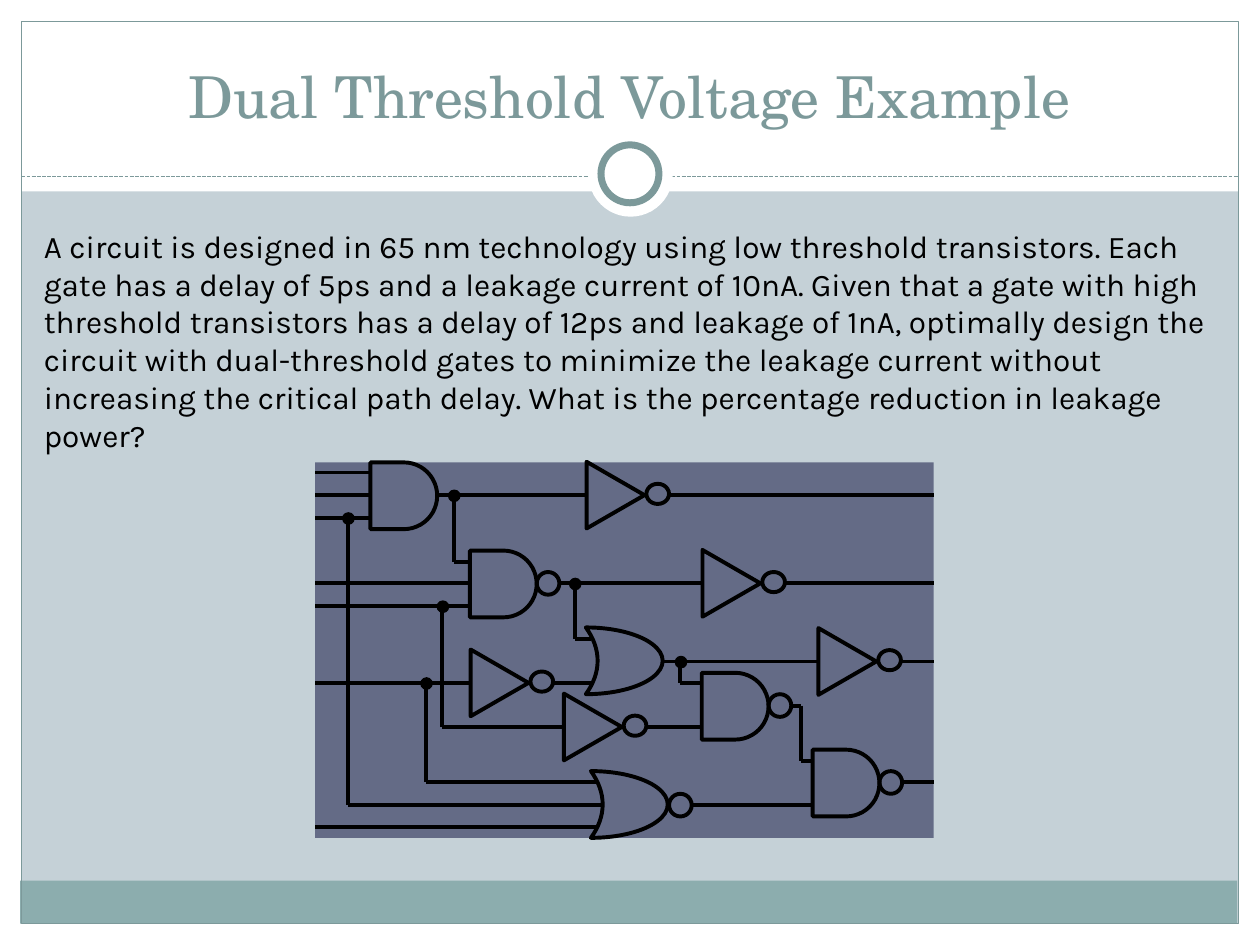
"""Build the dual threshold voltage slide with its logic circuit."""
from lxml import etree
from pptx import Presentation, util as u
from pptx.dml.color import RGBColor
from pptx.enum import dml, shapes, text

PX = 9144
HUE = {"back": "C5D1D7", "white": "FFFFFF", "band": "8CADAE",
       "teal": "7C999A", "slate": "646B86", "black": "000000"}
KIND = shapes.MSO_SHAPE
TITLE = "Dual Threshold Voltage Example"
BODY = (
    "A circuit is designed in 65 nm technology using low threshold transistors. "
    "Each gate has a delay of 5ps and a leakage current of 10nA. Given that a gate "
    "with high threshold transistors has a delay of 12ps and leakage of 1nA, "
    "optimally design the circuit with dual-threshold gates to minimize the leakage "
    "current without increasing the critical path delay. What is the percentage "
    "reduction in leakage power?")

BANDS = [
    ((0, 733, 1000, 17), "white"), ((0, 0, 1000, 152), "white"),
    ((0, 0, 17, 750), "white"), ((983, 0, 17, 750), "white"),
    ((16, 699, 966, 34), "band")]

GATES = {
    "and": dict(kind=KIND.FLOWCHART_DELAY, size=(53, 53), rise=26, out=53, dot=(18, 18)),
    "or": dict(kind=KIND.MOON, size=(61, 53), rise=27, out=62, dot=(18, 18)),
    "not": dict(kind=KIND.ISOSCELES_TRIANGLE, size=(53, 46), rise=23, out=51, dot=(18, 16))}

PARTS = [
    ("and", 294, 393, False), ("and", 373, 463, True),
    ("and", 557, 560, True), ("and", 645, 621, True),
    ("or", 465, 525, False), ("or", 469, 639, True),
    ("not", 462, 393, True), ("not", 554, 463, True), ("not", 646, 525, True),
    ("not", 370, 542, True), ("not", 444, 577, True)]

ROWS = [
    (375, 250, 294), (393, 250, 294), (411, 250, 294), (393, 347, 465),
    (393, 531, 741), (463, 250, 373), (481, 250, 373), (446, 360, 373),
    (463, 443, 557), (463, 623, 741), (507, 456, 469), (525, 526, 649),
    (525, 715, 741), (542, 250, 373), (542, 439, 469), (542, 540, 557),
    (560, 627, 636), (577, 351, 447), (577, 513, 557), (604, 636, 645),
    (621, 338, 474), (621, 715, 741), (639, 276, 478), (639, 548, 645),
    (656, 250, 474)]
DROPS = [
    (456, 463, 507), (360, 393, 446), (540, 525, 542), (636, 560, 604),
    (351, 481, 577), (338, 542, 621), (276, 411, 639)]
NODES = [(540, 525), (351, 481), (338, 542), (276, 411), (456, 463), (360, 393)]


def rgb(name):
    return RGBColor.from_string(HUE[name])


def draw(home, kind, box, fill=None, line=None, width=2.25):
    item = home.add_shape(kind, *(n * PX for n in box))
    item.shadow.inherit = False
    if fill:
        item.fill.solid()
        item.fill.fore_color.rgb = rgb(fill)
    else:
        item.fill.background()
    if line:
        item.line.color.rgb = rgb(line)
        item.line.width = u.Pt(width)
    else:
        item.line.fill.background()
    return item


def wire(home, ends, hue="black", width=2.25):
    item = home.add_connector(shapes.MSO_CONNECTOR.STRAIGHT, *(n * PX for n in ends))
    item.line.color.rgb = rgb(hue)
    item.line.width = u.Pt(width)
    main = "http://schemas.openxmlformats.org/drawingml/2006/main"
    etree.SubElement(item._element.spPr, f"{{{main}}}effectLst")
    return item


def gate(home, name, left, mid, ring):
    form = GATES[name]
    item = draw(home, form["kind"], (left, mid - form["rise"], *form["size"]), line="black")
    if name == "not":
        item.rotation = 90
    elif name == "or":
        item.adjustments[0] = 0.847
        item._element.spPr.xfrm.set("flipH", "1")
    if ring:
        draw(home, KIND.OVAL, (left + form["out"], mid - 9, *form["dot"]), line="black")


def write(item, box, words, font, size, hue):
    item.left, item.top, item.width, item.height = (n * PX for n in box)
    frame = item.text_frame
    frame.word_wrap = True
    frame.text = words
    para = frame.paragraphs[0]
    para.font.name = font
    para.font.size = u.Pt(size)
    para.font.color.rgb = rgb(hue)
    return frame, para


def frame_page(home):
    for box, hue in BANDS:
        draw(home, KIND.RECTANGLE, box, hue)
    draw(home, KIND.RECTANGLE, (17, 17, 966, 716), line="teal", width=0.75)
    rule = wire(home, (17, 140, 983, 140), "teal", 0.75)
    rule.line.dash_style = dml.MSO_LINE.SQUARE_DOT
    draw(home, KIND.OVAL, (467, 105, 67, 67), "white")
    draw(home, KIND.OVAL, (477, 115, 46, 46), "white", "teal", 4)


def circuit(home):
    draw(home, KIND.RECTANGLE, (250, 367, 491, 298), "slate")
    for part in PARTS:
        gate(home, *part)
    for y, x1, x2 in ROWS:
        wire(home, (x1, y, x2, y))
    for x, y1, y2 in DROPS:
        wire(home, (x, y1, x, y2))
    for x, y in NODES:
        draw(home, KIND.OVAL, (x - 4, y - 4, 9, 9), "black", "black", 0.75)


def main():
    deck = Presentation()
    deck.slide_width, deck.slide_height = 1000 * PX, 750 * PX
    page = deck.slides.add_slide(deck.slide_layouts[5])
    page.background.fill.solid()
    page.background.fill.fore_color.rgb = rgb("back")
    frame_page(page.shapes)

    title = page.shapes.title
    frame, para = write(title, (33, 25, 933, 83), TITLE, "TeX Gyre Schola", 33, "teal")
    frame.vertical_anchor = text.MSO_ANCHOR.BOTTOM
    frame.auto_size = text.MSO_AUTO_SIZE.NONE
    para.alignment = text.PP_ALIGN.CENTER
    page.shapes._spTree.append(title._element)

    circuit(page.shapes.add_group_shape().shapes)
    note = page.shapes.add_textbox(0, 0, PX, PX)
    write(note, (25, 175, 953, 162), BODY, "Karla", 18, "black")
    deck.save("out.pptx")


if __name__ == "__main__":
    main()
